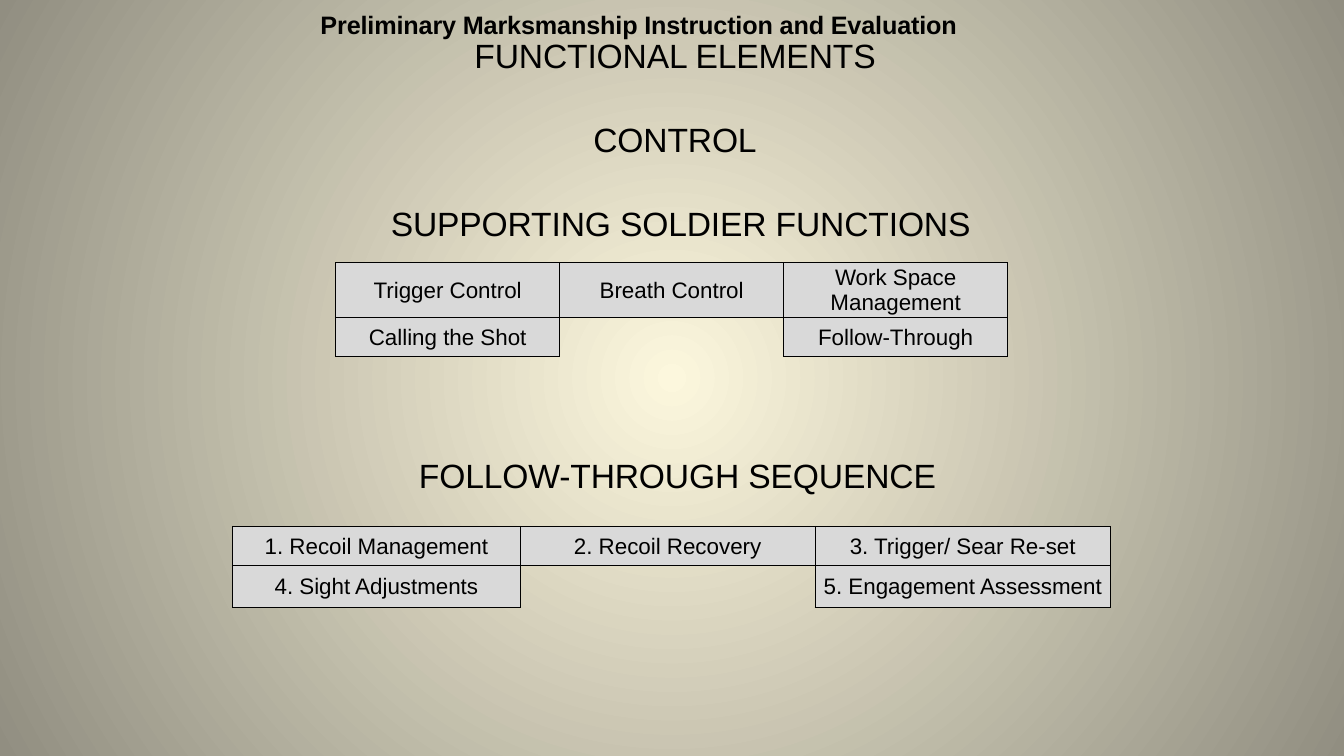
from lxml import etree
from pptx import Presentation
from pptx.dml.color import RGBColor
from pptx.enum.text import MSO_ANCHOR, MSO_AUTO_SIZE, PP_ALIGN
from pptx.oxml.ns import qn
from pptx.util import Pt

CENTER = PP_ALIGN.CENTER
MIDDLE = MSO_ANCHOR.MIDDLE
GROW = MSO_AUTO_SIZE.SHAPE_TO_FIT_TEXT


def color(code):
    return RGBColor.from_string(code)


class Deck:
    font = "Arial"
    ink = "000000"
    gray = "D9D9D9"

    def __init__(self):
        self.prs = Presentation()
        self.prs.slide_width, self.prs.slide_height = Pt(960), Pt(540)
        self.slide = self.prs.slides.add_slide(self.prs.slide_layouts[6])

    def glow(self, inner, outer):
        """Fill the background with a round gradient from the centre."""
        fill = self.slide.background.fill
        fill.gradient()
        for stop, code, pos in zip(fill.gradient_stops, (inner, outer), (0, 1)):
            stop.color.rgb = color(code)
            stop.position = pos
        lin = next(self.slide.element.iter(qn("a:lin")))
        ring = etree.Element(qn("a:path"), path="circle")
        etree.SubElement(ring, qn("a:fillToRect"),
                         {side: "50000" for side in "ltrb"})
        lin.getparent().replace(lin, ring)

    def add_run(self, para, text, size, bold=False):
        para.alignment = CENTER
        run = para.add_run()
        run.text = text
        font = run.font
        font.name, font.size, font.bold = self.font, Pt(size), bold
        font.color.rgb = color(self.ink)
        return run

    def label(self, text, left, top, width, height, size,
              bold=False, inset=0.7, indent=4.3, line=None):
        box = self.slide.shapes.add_textbox(
            Pt(left), Pt(top), Pt(width), Pt(height))
        frame = box.text_frame
        frame.word_wrap = True
        frame.auto_size = GROW
        frame.margin_left = frame.margin_right = frame.margin_bottom = 0
        frame.margin_top = Pt(inset)
        para = frame.paragraphs[0]
        run = self.add_run(para, text, size, bold)
        run._r.get_or_add_rPr().set("spc", "-10")
        para._p.get_or_add_pPr().set("marL", str(Pt(indent)))
        if line:
            para.line_spacing = line

    def edge(self, cell, sides):
        """Draw the named sides of a cell and clear the others."""
        props = cell._tc.get_or_add_tcPr()
        for spot, side in enumerate("LRTB"):
            line = etree.Element(qn("a:ln" + side), w=str(Pt(1)))
            if side in sides:
                fill = etree.SubElement(line, qn("a:solidFill"))
                etree.SubElement(fill, qn("a:srgbClr"), val=self.ink)
            else:
                etree.SubElement(line, qn("a:noFill"))
            props.insert(spot, line)

    def table(self, rows, left, top, widths, heights):
        table = self.slide.shapes.add_table(
            len(rows), len(widths), Pt(left), Pt(top),
            Pt(sum(widths)), Pt(sum(heights))).table
        table.first_row = table.horz_banding = False
        for col, width in zip(table.columns, widths):
            col.width = Pt(width)
        for row, height, texts in zip(table.rows, heights, rows):
            row.height = Pt(height)
            for cell, text in zip(row.cells, texts):
                self.fill(cell, text)

    def fill(self, cell, text):
        cell.margin_left = cell.margin_right = cell.margin_top = Pt(0.7)
        cell.margin_bottom = 0
        cell.vertical_anchor = MIDDLE
        if text:
            self.add_run(cell.text_frame.paragraphs[0], text, 16)
            cell.fill.solid()
            cell.fill.fore_color.rgb = color(self.gray)
        else:
            cell.fill.background()
        self.edge(cell, "LRTB" if text else "LRT")


def main():
    deck = Deck()
    deck.glow("FCF7DD", "918E81")
    deck.label("Preliminary Marksmanship Instruction and Evaluation",
               148.3, 5.8, 615, 23, 18, bold=True,
               inset=0, indent=0.7, line=1.04)
    for text, left, top in (
            ("FUNCTIONAL ELEMENTS", 120, 24),
            ("CONTROL", 120, 84),
            ("SUPPORTING SOLDIER FUNCTIONS", 124, 144),
            ("FOLLOW-THROUGH SEQUENCE", 121.7, 324)):
        deck.label(text, left, top, 720, 30, 24)
    deck.table((("Trigger Control", "Breath Control", "Work Space Management"),
                ("Calling the Shot", "", "Follow-Through")),
               239.8, 187.6, (160, 160, 160), (28.1, 28.1))
    deck.table((("1. Recoil Management", "2. Recoil Recovery",
                 "3. Trigger/ Sear Re-set"),
                ("4. Sight Adjustments", "", "5. Engagement Assessment")),
               166.3, 376, (205.2, 210.8, 210.8), (28.1, 30))
    deck.prs.save("out.pptx")


if __name__ == "__main__":
    main()
